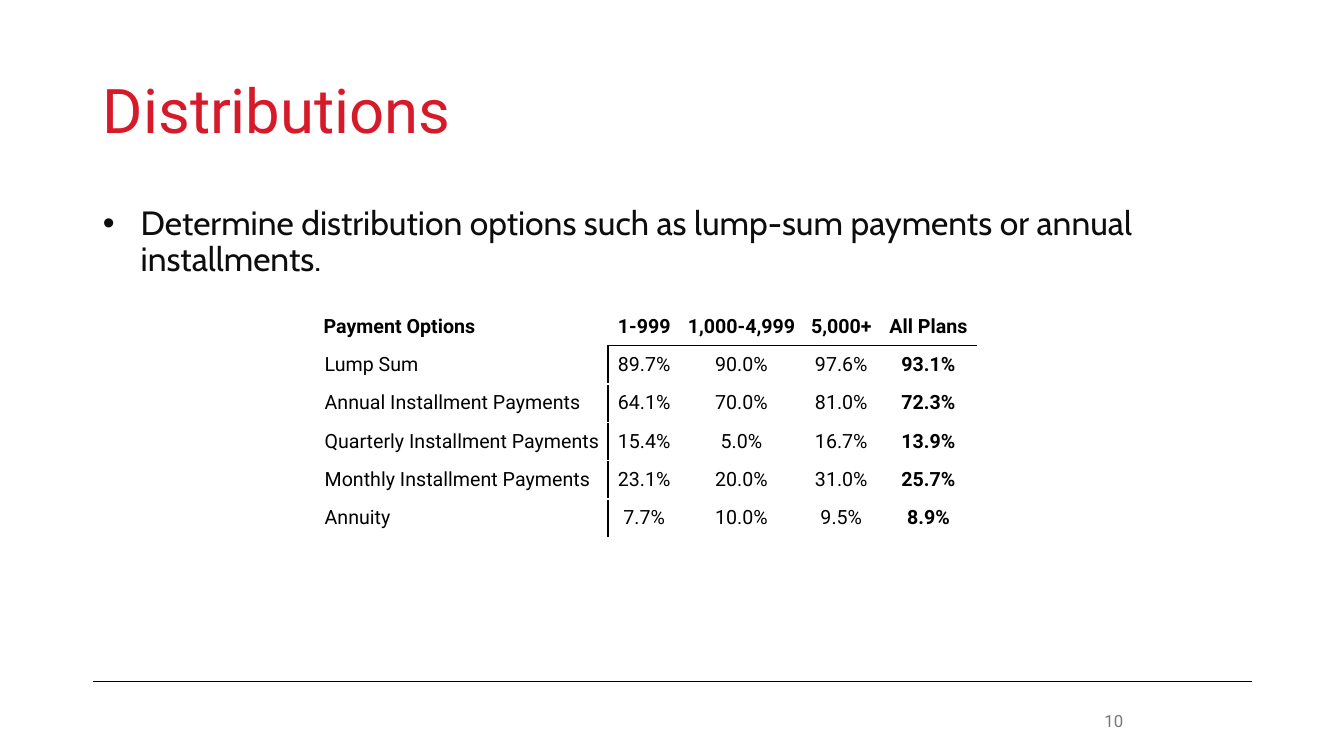
from lxml.etree import SubElement as Sub
from pptx import Presentation
from pptx.dml.color import RGBColor as Rgb
from pptx.enum.text import MSO_ANCHOR as Anchor, MSO_AUTO_SIZE as Auto, PP_ALIGN as Align
from pptx.oxml.ns import qn
from pptx.util import Pt

PX = 9144
HEX = {"red": "D61A29", "ink": "0D0D0D", "black": "000000", "gray": "797979"}
WIDTHS = [288, 72, 121, 77, 96]
ROW = 38
ROWS = [
    ["Payment Options", "1-999", "1,000-4,999", "5,000+", "All Plans"],
    ["Lump Sum", "89.7%", "90.0%", "97.6%", "93.1%"],
    ["Annual Installment Payments", "64.1%", "70.0%", "81.0%", "72.3%"],
    ["Quarterly Installment Payments", "15.4%", "5.0%", "16.7%", "13.9%"],
    ["Monthly Installment Payments", "23.1%", "20.0%", "31.0%", "25.7%"],
    ["Annuity", "7.7%", "10.0%", "9.5%", "8.9%"],
]


class Deck:
    """Hold the style and the current slide, and draw each kind of element."""

    def __init__(self, wide, high):
        self.show = Presentation()
        self.show.slide_width, self.show.slide_height = wide * PX, high * PX
        self.slide = self.show.slides.add_slide(self.show.slide_layouts[1])
        self.shapes = self.slide.shapes

    def put(self, frame, text, size, color, face="Roboto", bold=False, align=Align.LEFT):
        frame.text = text
        para = frame.paragraphs[0]
        para.alignment = align
        para.space_before = Pt(0)
        font = para.font
        font.size, font.name, font.bold = Pt(size), face, bold
        font.color.rgb = Rgb.from_string(HEX[color])
        return para

    def place(self, shape, box, anchor):
        shape.left, shape.top, shape.width, shape.height = [n * PX for n in box]
        frame = shape.text_frame
        frame.word_wrap, frame.auto_size = True, Auto.NONE
        frame.vertical_anchor = anchor
        return frame

    def title(self, text, box):
        frame = self.place(self.shapes.title, box, Anchor.MIDDLE)
        self.put(frame, text, 44, "red").line_spacing = 0.9

    def body(self, text, box):
        frame = self.place(self.slide.placeholders[1], box, Anchor.TOP)
        props = frame.paragraphs[0]._p.get_or_add_pPr()
        props.set("marL", "0")
        props.set("indent", "0")
        Sub(props, qn("a:buNone"))
        self.put(frame, text, 24, "ink", "Cabin").line_spacing = 0.9

    def label(self, text, box):
        shape = self.shapes.add_textbox(0, 0, PX, PX)
        frame = self.place(shape, box, Anchor.MIDDLE)
        self.put(frame, text, 12, "gray", align=Align.RIGHT)

    def rule(self, left, top, right):
        line = self.shapes.add_connector(1, left * PX, top * PX, right * PX, top * PX)
        line.line.color.rgb = Rgb.from_string(HEX["black"])
        line.line.width = Pt(0.5)
        Sub(line._element.spPr, qn("a:effectLst"))

    def edge(self, cell, side):
        line = Sub(cell._tc.get_or_add_tcPr(), qn("a:ln" + side), w=str(Pt(1)))
        fill = Sub(line, qn("a:solidFill"))
        Sub(fill, qn("a:srgbClr"), val=HEX["black"])

    def table(self, rows, left, top):
        frame = self.shapes.add_table(len(rows), len(WIDTHS), left * PX, top * PX,
                                      sum(WIDTHS) * PX, len(rows) * ROW * PX)
        grid = frame.table
        grid.first_row = grid.horz_banding = False
        for col, width in zip(grid.columns, WIDTHS):
            col.width = width * PX
        for r, row in enumerate(rows):
            grid.rows[r].height = ROW * PX
            for c, text in enumerate(row):
                self.cell(grid.cell(r, c), text, r, c)

    def cell(self, cell, text, r, c):
        cell.vertical_anchor = Anchor.MIDDLE
        cell.margin_left = cell.margin_right = (7 if r or c else 6) * PX
        cell.margin_top = cell.margin_bottom = 0
        bold = r == 0 or c == len(WIDTHS) - 1
        align = Align.CENTER if c else Align.LEFT
        self.put(cell.text_frame, text, 14, "black", bold=bold, align=align)
        sides = {"L": r and c == 1, "R": r and c == 0, "T": r == 1 and c, "B": r == 0 and c}
        for side, drawn in sides.items():
            if drawn:
                self.edge(cell, side)
        cell.fill.background()


def main():
    deck = Deck(1333, 750)
    deck.rule(92, 676, 1242)
    deck.title("Distributions", (92, 40, 1150, 145))
    deck.body("Determine distribution options such as lump-sum payments or annual installments.",
              (92, 200, 1150, 282))
    deck.label("10", (942, 695, 182, 40))
    deck.table(ROWS, 315, 305)
    deck.show.save("out.pptx")


if __name__ == "__main__":
    main()
